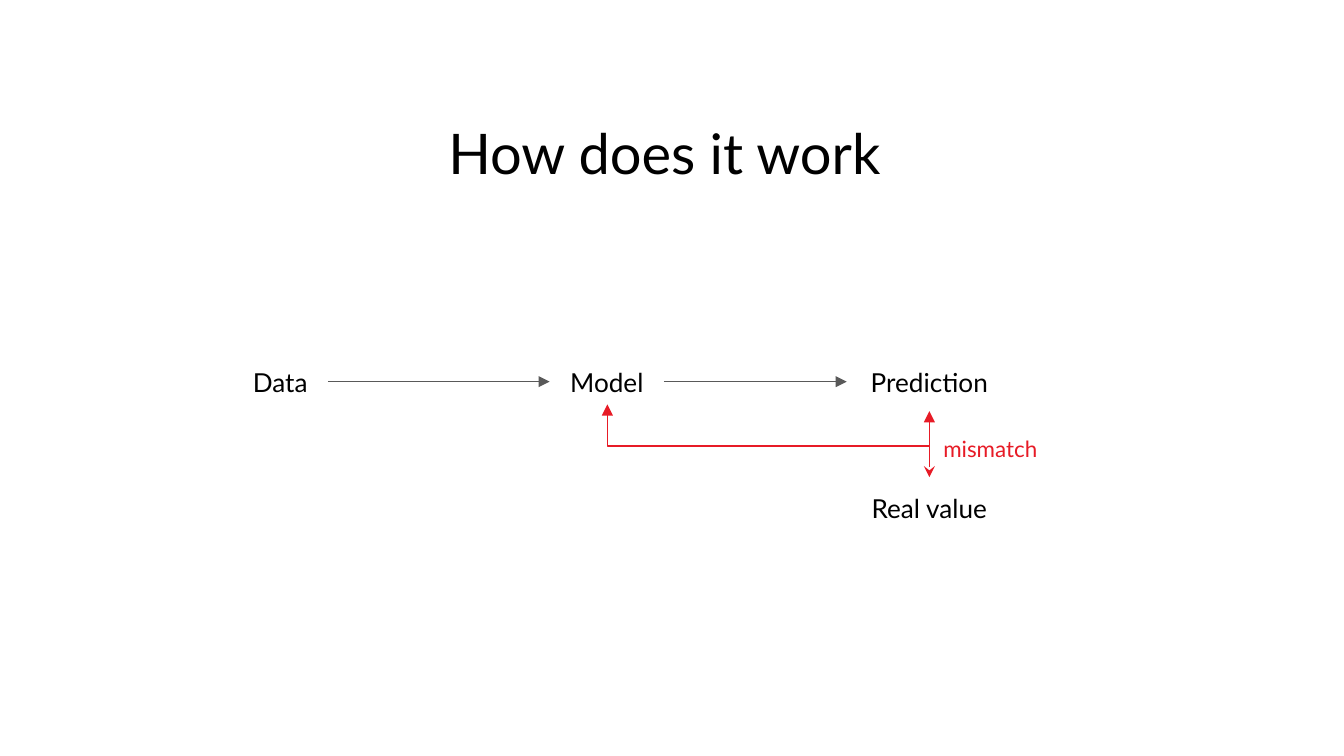
from dataclasses import dataclass

import pptx
import pptx.dml.color
import pptx.enum.shapes
import pptx.enum.text
import pptx.oxml
import pptx.oxml.ns
import pptx.util

Inches = pptx.util.Inches
Pt = pptx.util.Pt
ALIGN = pptx.enum.text.PP_ALIGN
ANCHOR = pptx.enum.text.MSO_ANCHOR
CONNECTOR = pptx.enum.shapes.MSO_CONNECTOR

SLIDE_WIDTH = 10
SLIDE_HEIGHT = SLIDE_WIDTH * 9 / 16
FONT = "Lato"
BLACK, RED, GREY = "000000", "E71B26", "595959"
TOP, LEFT, BOTTOM, RIGHT = range(4)


@dataclass
class Label:
    text: str
    left: float
    top: float
    width: float
    height: float
    size: float = 14
    color: str = BLACK
    align: ALIGN = ALIGN.CENTER
    anchor: ANCHOR = ANCHOR.MIDDLE


@dataclass
class Arrow:
    start: str
    start_side: int
    end: str
    end_side: int
    color: str
    head: str = ""


LABELS = [
    Label("Data", 1.73, 2.66, 0.71, 0.36),
    Label("Model", 4.09, 2.66, 0.85, 0.36),
    Label("Prediction", 6.3, 2.62, 1.23, 0.44),
    Label("Real value", 6.3, 3.55, 1.23, 0.46),
    Label("mismatch", 6.92, 3.14, 1.35, 0.36, 12, RED, ALIGN.LEFT, ANCHOR.TOP),
]
ARROWS = [
    Arrow("Data", RIGHT, "Model", LEFT, GREY),
    Arrow("Model", RIGHT, "Prediction", LEFT, GREY),
    Arrow("Real value", TOP, "Prediction", BOTTOM, RED, head="stealth"),
]
TITLE = Label("How does it work", 0.64, 0.78, 8.61, 0.7, 30, anchor=ANCHOR.TOP)


def rgb(color: str) -> pptx.dml.color.RGBColor:
    return pptx.dml.color.RGBColor.from_string(color)


def write_label(shape, label: Label) -> None:
    frame = shape.text_frame
    frame.word_wrap = True
    frame.auto_size = pptx.enum.text.MSO_AUTO_SIZE.NONE
    frame.vertical_anchor = label.anchor
    frame.margin_left = frame.margin_right = Inches(0.1)
    frame.margin_top = frame.margin_bottom = Inches(0.1)
    paragraph = frame.paragraphs[0]
    paragraph.alignment = label.align
    run = paragraph.add_run()
    run.text = label.text
    run.font.name = FONT
    run.font.size = Pt(label.size)
    run.font.color.rgb = rgb(label.color)


def add_label(slide, label: Label):
    shape = slide.shapes.add_textbox(
        Inches(label.left), Inches(label.top), Inches(label.width), Inches(label.height)
    )
    write_label(shape, label)
    return shape


def style_connector(connector, color: str, head: str = "") -> None:
    """Set the line, put a triangle at the end and, if named, a head at the start."""
    connector.line.color.rgb = rgb(color)
    connector.line.width = Pt(0.75)
    line = connector.line._get_or_add_ln()
    for tag, kind in (("a:headEnd", head), ("a:tailEnd", "triangle")):
        if kind:
            end = pptx.oxml.parse_xml(f"<{tag} {pptx.oxml.ns.nsdecls('a')}/>")
            end.set("type", kind)
            line.append(end)
    connector._element.spPr.append(
        pptx.oxml.parse_xml(f"<a:effectLst {pptx.oxml.ns.nsdecls('a')}/>")
    )


def add_arrow(slide, arrow: Arrow, boxes: dict) -> None:
    connector = slide.shapes.add_connector(CONNECTOR.STRAIGHT, 0, 0, 0, 0)
    connector.begin_connect(boxes[arrow.start], arrow.start_side)
    connector.end_connect(boxes[arrow.end], arrow.end_side)
    style_connector(connector, arrow.color, arrow.head)


def add_feedback(slide) -> None:
    """Lead from the mismatch back to the model with a single bend."""
    connector = slide.shapes.add_connector(
        CONNECTOR.ELBOW, Inches(6.92), Inches(3.32), Inches(4.52), Inches(3.01)
    )
    connector._element.spPr.prstGeom.set("prst", "bentConnector2")
    style_connector(connector, RED)


def main() -> None:
    presentation = pptx.Presentation()
    presentation.slide_width = Inches(SLIDE_WIDTH)
    presentation.slide_height = Inches(SLIDE_HEIGHT)
    slide = presentation.slides.add_slide(presentation.slide_layouts[5])

    title = slide.shapes.title
    title.left, title.top = Inches(TITLE.left), Inches(TITLE.top)
    title.width, title.height = Inches(TITLE.width), Inches(TITLE.height)
    write_label(title, TITLE)

    boxes = {label.text: add_label(slide, label) for label in LABELS}
    for arrow in ARROWS:
        add_arrow(slide, arrow, boxes)
    add_feedback(slide)
    presentation.save("out.pptx")


if __name__ == "__main__":
    main()
